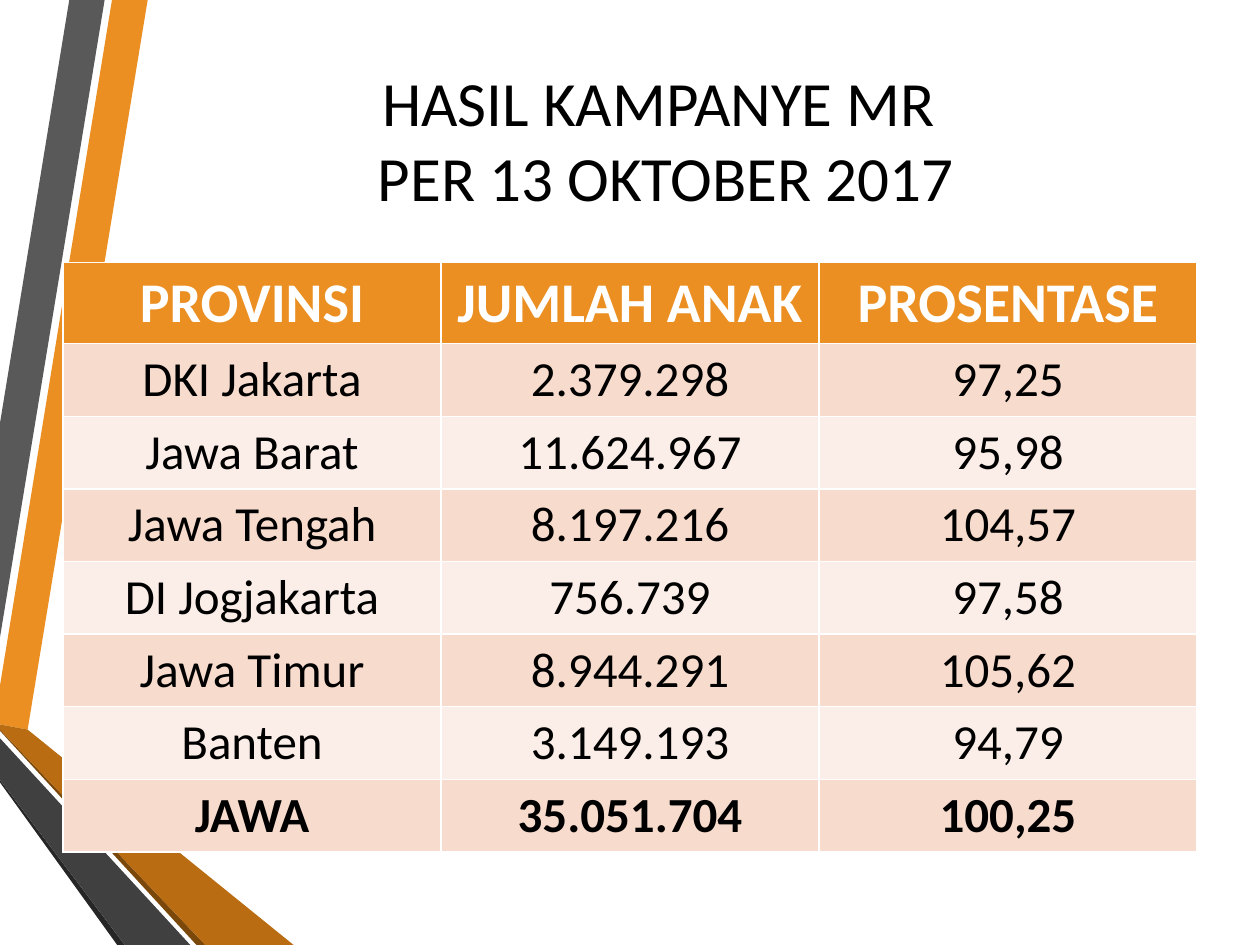
from pptx import Presentation, util as u
from pptx.dml.color import RGBColor
from pptx.enum import text
from pptx.oxml import parse_xml
from pptx.oxml.ns import nsdecls

COLORS = {
    "orange": "EB8F22", "rust": "B96C11", "brown": "7B480B",
    "gray": "595959", "dark": "404040", "black": "262626",
    "band_a": "F7DBCD", "band_b": "FBEEE8", "white": "FFFFFF", "text": "000000",
}

RIBBONS = [
    ("orange", [(0, 391.7), (0, 414), (15.8, 416.9), (84.4, 0), (64, 0)]),
    ("gray", [(59.8, 0), (39.6, 0), (0, 241.9), (0, 364.3)]),
    ("black", [(0, 445.7), (0, 447.1), (67, 540), (71.3, 540)]),
    ("brown", [(0, 416.9), (0, 417.6), (112.3, 540), (117.4, 540)]),
    ("rust", [(0, 416.9), (117.4, 540), (167.8, 540), (15.8, 416.9), (0, 414)]),
    ("dark", [(0, 445.7), (71.3, 540), (108.7, 540), (0, 421.9)]),
]

ROWS = [
    ("PROVINSI", "JUMLAH ANAK", "PROSENTASE"),
    ("DKI Jakarta", "2.379.298", "97,25"),
    ("Jawa Barat", "11.624.967", "95,98"),
    ("Jawa Tengah", "8.197.216", "104,57"),
    ("DI Jogjakarta", "756.739", "97,58"),
    ("Jawa Timur", "8.944.291", "105,62"),
    ("Banten", "3.149.193", "94,79"),
    ("JAWA", "35.051.704", "100,25"),
]


class Deck:
    font = "Calibri"

    def __init__(self, width, height):
        self.prs = Presentation()
        self.prs.slide_width, self.prs.slide_height = u.Pt(width), u.Pt(height)
        self.s = self.prs.slides.add_slide(self.prs.slide_layouts[5])

    def color(self, name):
        return RGBColor.from_string(COLORS[name])

    def label(self, tf, words, color, **fmt):
        tf.text = words
        p = tf.paragraphs[0]
        p.alignment = text.PP_ALIGN.CENTER
        for r in p.runs:
            for key, value in {"name": self.font, **fmt}.items():
                setattr(r.font, key, value)
            r.font.color.rgb = self.color(color)

    def ribbon(self, color, points):
        start, *rest = [(u.Pt(x), u.Pt(y)) for x, y in points]
        fb = self.s.shapes.build_freeform(*start)
        fb.add_line_segments(rest)
        sp = fb.convert_to_shape()
        sp.shadow.inherit = False
        sp.fill.solid()
        sp.fill.fore_color.rgb = self.color(color)
        sp.line.fill.background()

    def title(self, words, left, top, width, height):
        sp = self.s.shapes.title
        box = {"left": left, "top": top, "width": width, "height": height}
        for key, value in box.items():
            setattr(sp, key, u.Pt(value))
        tf = sp.text_frame
        tf.auto_size = text.MSO_AUTO_SIZE.NONE
        tf.vertical_anchor = text.MSO_ANCHOR.MIDDLE
        self.label(tf, words, "text", size=u.Pt(36))

    def borders(self, cell, width):
        tcPr = cell._tc.get_or_add_tcPr()
        for i, side in enumerate(("lnL", "lnR", "lnT", "lnB")):
            tcPr.insert(i, parse_xml(
                f'<a:{side} {nsdecls("a")} w="{u.Pt(width)}"><a:solidFill>'
                f'<a:srgbClr val="{COLORS["white"]}"/></a:solidFill></a:{side}>'))

    def table(self, rows, left, top, width, head_height, row_height):
        height = head_height + row_height * (len(rows) - 1)
        tbl = self.s.shapes.add_table(
            len(rows), len(rows[0]), *map(u.Pt, (left, top, width, height))).table
        for i, row in enumerate(rows):
            head = i == 0
            tbl.rows[i].height = u.Pt(head_height if head else row_height)
            fill = "orange" if head else "band_a" if i % 2 else "band_b"
            for j, words in enumerate(row):
                cell = tbl.cell(i, j)
                cell.fill.solid()
                cell.fill.fore_color.rgb = self.color(fill)
                self.borders(cell, 1)
                self.label(cell.text_frame, words, "white" if head else "text",
                           size=u.Pt(32 if head else 28),
                           bold=head or i == len(rows) - 1)


def main():
    deck = Deck(720, 540)
    for color, points in RIBBONS:
        deck.ribbon(color, points)
    deck.title("HASIL KAMPANYE MR \vPER 13 OKTOBER 2017", 77, 36, 607, 86.4)
    deck.table(ROWS, 36, 150, 648, 46, 41.5)
    deck.prs.save("out.pptx")


if __name__ == "__main__":
    main()
